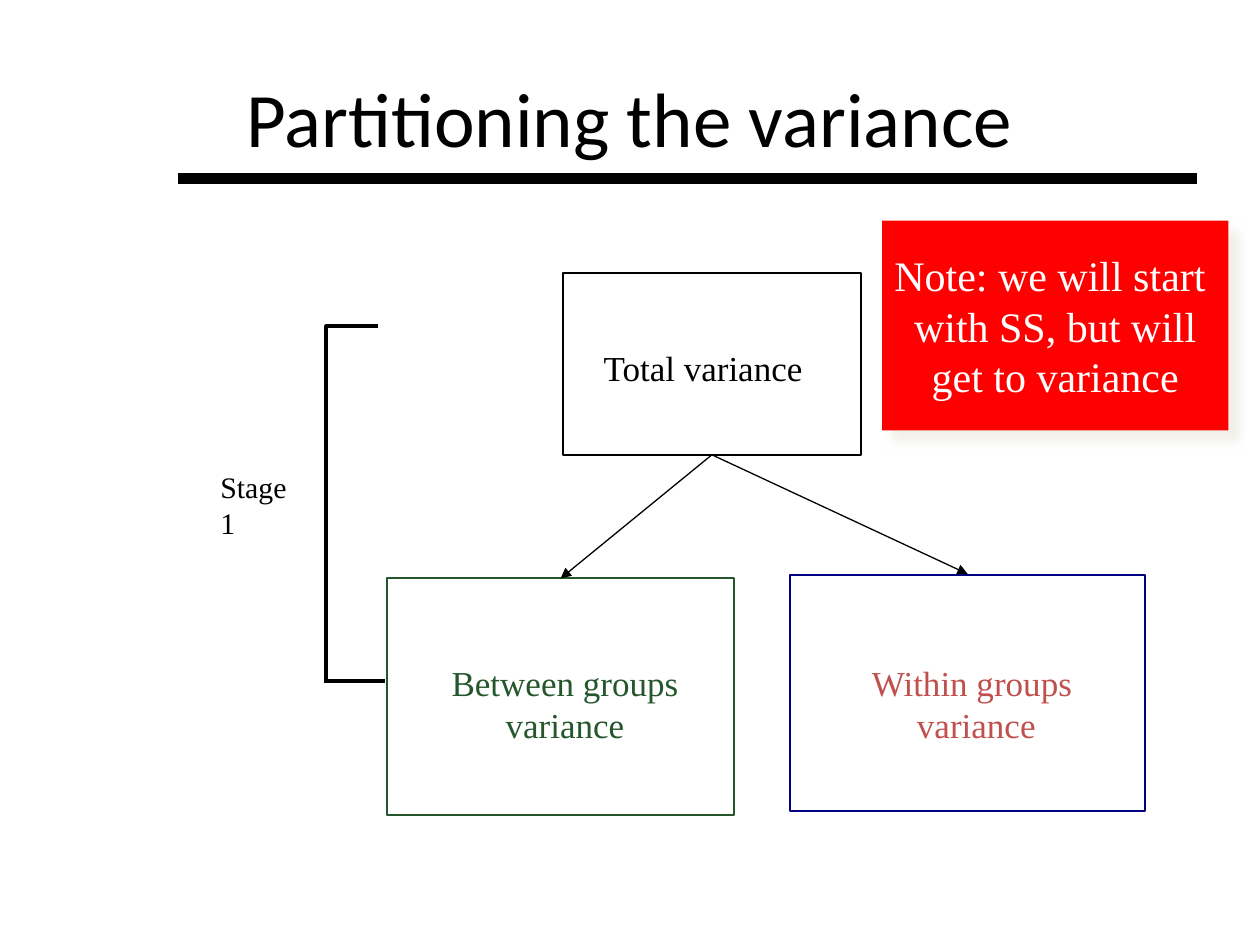
from lxml.etree import SubElement
from pptx import Presentation
from pptx.dml.color import RGBColor
from pptx.enum.shapes import MSO_CONNECTOR, MSO_SHAPE
from pptx.enum.text import MSO_ANCHOR, PP_ALIGN
from pptx.oxml.ns import qn
from pptx.util import Pt

BLACK = RGBColor(0x00, 0x00, 0x00)
WHITE = RGBColor(0xFF, 0xFF, 0xFF)
RED = RGBColor(0xFF, 0x00, 0x00)
GREEN = RGBColor(0x25, 0x56, 0x2C)
NAVY = RGBColor(0x00, 0x00, 0x80)
BRICK = RGBColor(0xC0, 0x50, 0x4D)
SHADE = RGBColor(0xEE, 0xEC, 0xE1)
SERIF = "Times New Roman"


def write(shape, lines, size=20, color=BLACK, font=SERIF, align=PP_ALIGN.CENTER,
          anchor=MSO_ANCHOR.TOP, wrap=False, inset=0):
    """Fill a shape with one formatted paragraph per line."""
    frame = shape.text_frame
    frame.word_wrap = wrap
    frame.vertical_anchor = anchor
    frame.margin_left = frame.margin_right = Pt(inset)
    frame.margin_top = frame.margin_bottom = Pt(inset / 2)
    frame.text = "\n".join(lines)
    for paragraph in frame.paragraphs:
        paragraph.alignment = align
        paragraph.font.size = Pt(size)
        paragraph.font.name = font
        paragraph.font.color.rgb = color


def add_label(slide, box, lines, **style):
    """Add a text box without margins."""
    write(slide.shapes.add_textbox(*map(Pt, box)), lines, **style)


def add_line(slide, start, end, width, arrow=False):
    """Add a straight black line, with an arrowhead at its end if asked."""
    line = slide.shapes.add_connector(
        MSO_CONNECTOR.STRAIGHT, *map(Pt, (*start, *end)))
    line.line.color.rgb = BLACK
    line.line.width = Pt(width)
    if arrow:
        SubElement(line.line._get_or_add_ln(), qn("a:tailEnd"), type="triangle")
    SubElement(line._element.spPr, qn("a:effectLst"))


def add_title(slide, box):
    """Place the title and the thick rule below it."""
    title = slide.shapes.title
    title.left, title.top, title.width, title.height = map(Pt, box)
    write(title, ["Partitioning the variance"], size=44, font="Calibri",
          anchor=MSO_ANCHOR.MIDDLE, wrap=True, inset=7.2)
    add_line(slide, (102, 102), (684, 102), 6)


def add_variance(slide, box, label_box, lines, outline, color):
    """Draw an outlined variance box with its label."""
    frame = slide.shapes.add_shape(MSO_SHAPE.RECTANGLE, *map(Pt, box))
    frame.shadow.inherit = False
    frame.fill.background()
    frame.line.color.rgb = outline
    frame.line.width = Pt(1.13)
    add_label(slide, label_box, lines, color=color)


def add_note(slide, box):
    """Draw the red note with its soft offset shadow."""
    note = slide.shapes.add_shape(MSO_SHAPE.RECTANGLE, *map(Pt, box))
    note.shadow.inherit = False
    note.fill.solid()
    note.fill.fore_color.rgb = RED
    note.line.fill.background()
    effects = note._element.spPr.find(qn("a:effectLst"))
    shadow = SubElement(effects, qn("a:outerShdw"), blurRad=str(Pt(5)),
                        dist=str(Pt(8.5)), dir="2700000", algn="ctr",
                        rotWithShape="0")
    shade = SubElement(shadow, qn("a:srgbClr"), val=str(SHADE))
    SubElement(shade, qn("a:alpha"), val="75000")
    write(note, ["Note: we will start ", "with SS, but will", "get to variance"],
          size=24, color=WHITE, anchor=MSO_ANCHOR.MIDDLE, inset=7.2)


def add_stage(slide, box):
    """Draw the bracket that spans the stage, and its label."""
    left, top, width, height = box
    builder = slide.shapes.build_freeform(Pt(left + width), Pt(top))
    builder.add_line_segments(
        [(Pt(left), Pt(top)), (Pt(left), Pt(top + height))], close=False)
    bracket = builder.convert_to_shape()
    bracket.shadow.inherit = False
    bracket.fill.background()
    bracket.line.color.rgb = BLACK
    bracket.line.width = Pt(2.25)
    foot = top + height - 1
    add_line(slide, (left - 1.5, foot), (left + width + 4.3, foot), 2.25)
    add_label(slide, (left - 60.4, top + 81.5, 50, 40), ["Stage 1"], size=17,
              align=PP_ALIGN.LEFT, wrap=True)


def main():
    """Build the slide and save it."""
    deck = Presentation()
    deck.slide_width, deck.slide_height = Pt(720), Pt(540)
    slide = deck.slides.add_slide(deck.slide_layouts[5])
    add_title(slide, (36, 21.6, 648, 90))
    add_variance(slide, (321.8, 156.2, 170, 103.7), (329.8, 198, 144, 24),
                 ["Total variance"], BLACK, BLACK)
    add_variance(slide, (221, 330.5, 198.7, 135.4), (255.6, 378, 134.6, 48),
                 ["Between groups ", "variance"], GREEN, GREEN)
    add_variance(slide, (451.4, 328.3, 203, 135.4), (498.2, 378, 119.5, 48),
                 ["Within groups ", "variance"], NAVY, BRICK)
    add_note(slide, (504, 126, 198, 120))
    add_stage(slide, (186.4, 186.5, 29.6, 203.4))
    for tip in ((320.4, 330.5), (553, 328)):
        add_line(slide, (406.8, 259.9), tip, 0.75, arrow=True)
    deck.save("out.pptx")


if __name__ == "__main__":
    main()
